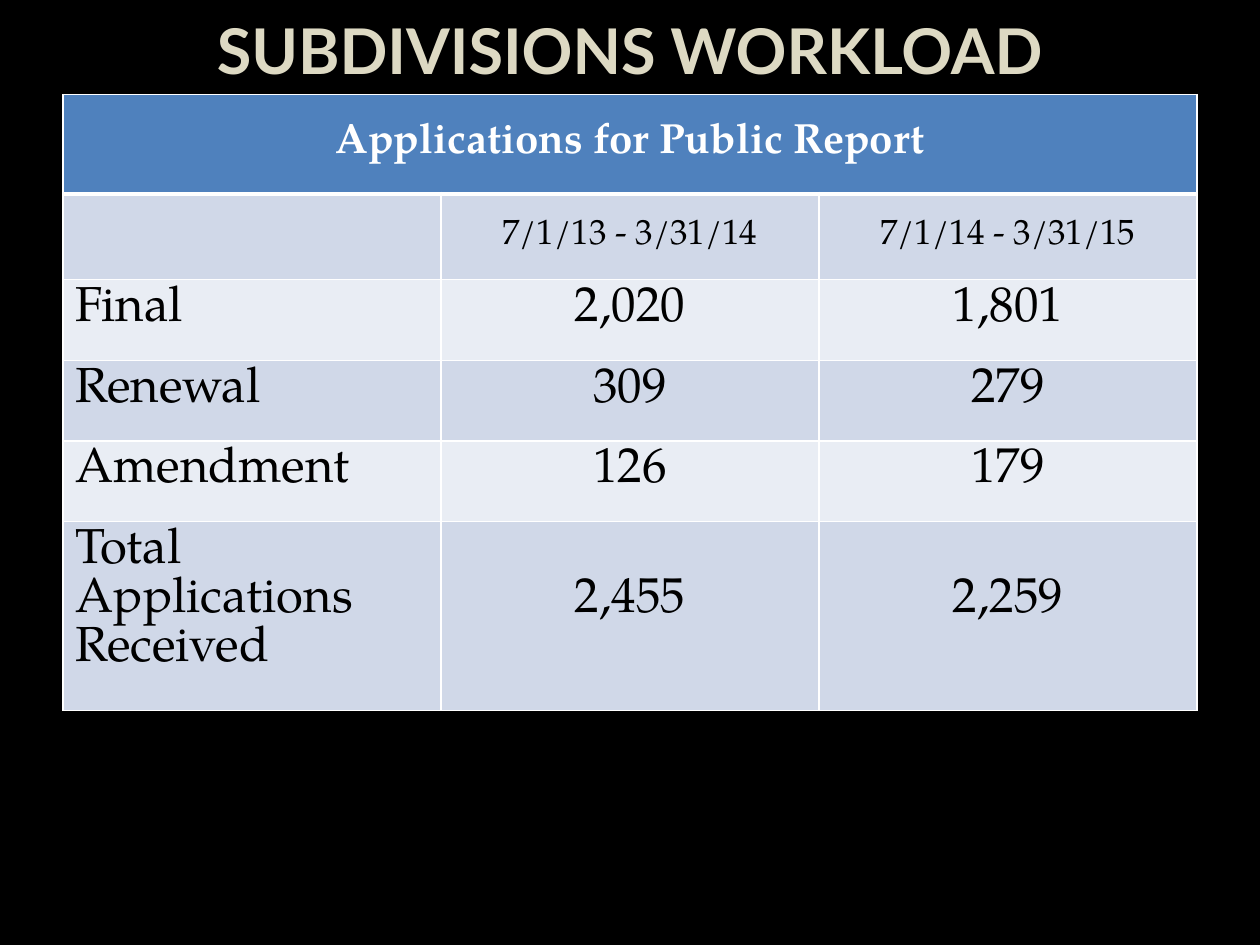
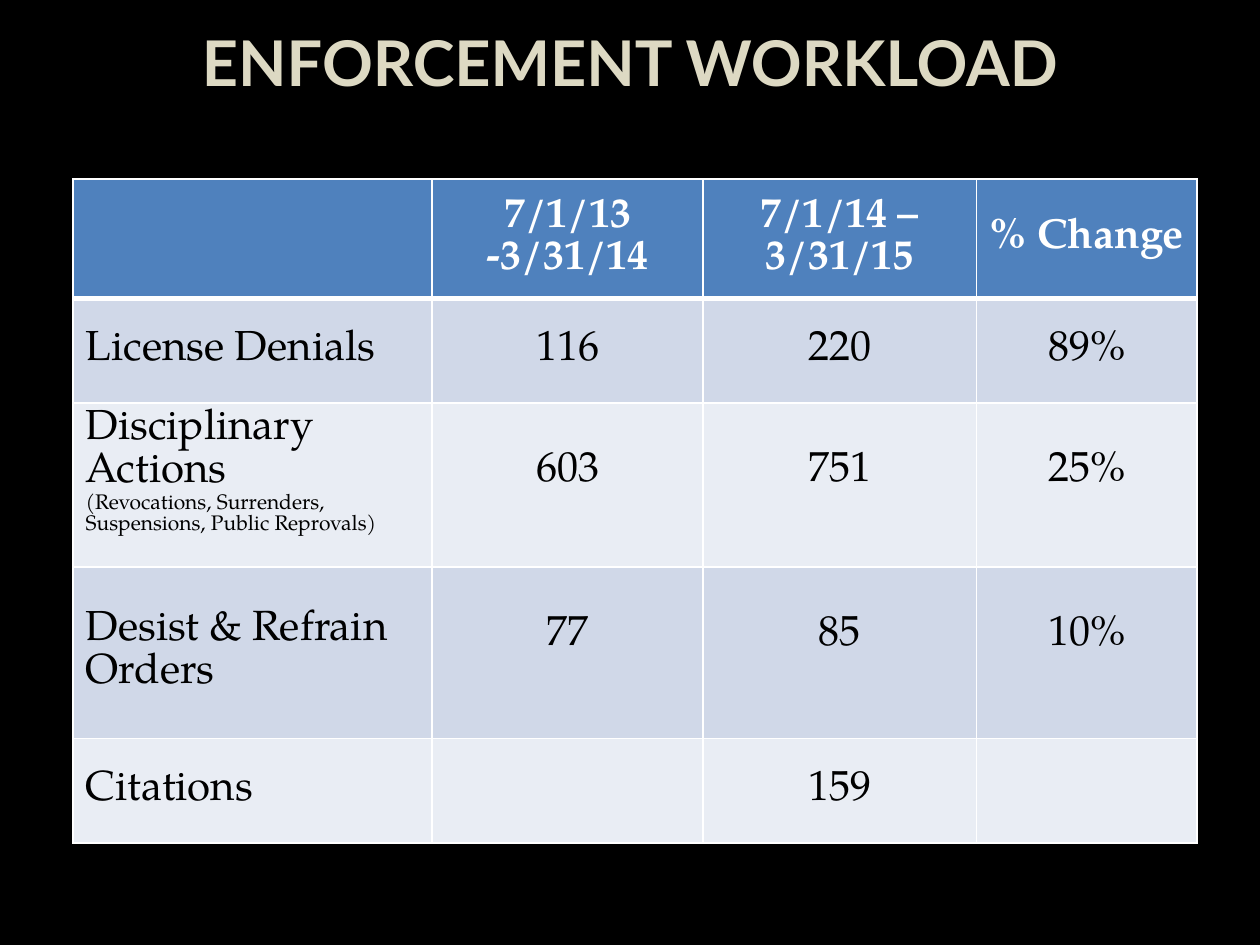
"""Build two workload slides, each with a title and a table."""
from lxml import etree
from pptx import Presentation
from pptx.dml.color import RGBColor
from pptx.enum.text import MSO_ANCHOR as ANCHOR, PP_ALIGN as ALIGN
from pptx.oxml.ns import qn
from pptx.util import Inches, Pt

BLACK, WHITE, SAND = "000000", "FFFFFF", "DDD9C3"
BLUE, BANDS = "4F81BD", ("E9EDF4", "D0D8E8")
TITLE_FONT, TABLE_FONT = "Lato", "TeX Gyre Pagella"
TOP, MIDDLE = ANCHOR.TOP, ANCHOR.MIDDLE


def put_text(tf, text, font=TABLE_FONT, size=24, color=BLACK, bold=False,
             align=ALIGN.CENTER, note_size=12):
    for i, line in enumerate(text.split("\n")):
        p = tf.add_paragraph() if i else tf.paragraphs[0]
        p.alignment = align
        r = p.add_run()
        r.text = line
        r.font.name, r.font.bold = font, bold
        r.font.size = Pt(note_size if i else size)
        r.font.color.rgb = RGBColor.from_string(color)


def add_border(cell, side, points):
    tc_pr = cell._tc.get_or_add_tcPr()
    ln = etree.SubElement(tc_pr, qn("a:ln" + side), w=str(Pt(points)))
    fill = etree.SubElement(ln, qn("a:solidFill"))
    etree.SubElement(fill, qn("a:srgbClr"), val=WHITE)


# Each row: height, text size, anchor, lines skipped above figures, texts.
SLIDES = [
    dict(title="SUBDIVISIONS WORKLOAD", title_top=0.04,
         left=0.5, top=0.75, cols=[3] * 3, rows=[
             (0.79, 24, MIDDLE, 0, ["Applications for Public Report", "", ""]),
             (0.68, 20, MIDDLE, 0, ["", "7/1/13 - 3/31/14", "7/1/14 - 3/31/15"]),
             (0.64, 28, TOP, 0, ["Final", "2,020", "1,801"]),
             (0.64, 28, TOP, 0, ["Renewal", "309", "279"]),
             (0.64, 28, TOP, 0, ["Amendment", "126", "179"]),
             (1.45, 28, TOP, 1, ["Total Applications Received", "2,455", "2,259"])]),
    dict(title="ENFORCEMENT WORKLOAD", title_top=0.14,
         left=0.58, top=1.42, cols=[2.85, 2.15, 2.17, 1.75], rows=[
             (0.95, 24, MIDDLE, 0, ["", "7/1/13 -3/31/14", "7/1/14 – 3/31/15", "% Change"]),
             (0.83, 24, MIDDLE, 0, ["License Denials", "116", "220", "89%"]),
             (1.1, 24, TOP, 1, ["Disciplinary Actions\n(Revocations, Surrenders, "
                                "Suspensions, Public Reprovals)", "603", "751", "25%"]),
             (1.36, 24, MIDDLE, 1, ["Desist & Refrain Orders", "77", "85", "10%"]),
             (0.83, 24, MIDDLE, 0, ["Citations", "", "159", ""])]),
]

prs = Presentation()
prs.slide_width, prs.slide_height = Inches(10), Inches(7.5)

for page in SLIDES:
    s = prs.slides.add_slide(prs.slide_layouts[6])
    s.background.fill.solid()
    s.background.fill.fore_color.rgb = RGBColor.from_string(BLACK)

    title = s.shapes.add_textbox(Inches(0.5), Inches(page["title_top"]), Inches(9), Inches(0.7))
    tf = title.text_frame
    tf.word_wrap, tf.vertical_anchor = True, MIDDLE
    put_text(tf, page["title"], font=TITLE_FONT, size=36, color=SAND, bold=True)

    cols, rows = page["cols"], page["rows"]
    table = s.shapes.add_table(len(rows), len(cols), Inches(page["left"]), Inches(page["top"]),
                               Inches(sum(cols)), Inches(sum(row[0] for row in rows))).table
    table.first_row = table.horz_banding = False
    for col, width in zip(table.columns, cols):
        col.width = Inches(width)

    for i, (height, size, anchor, skipped, texts) in enumerate(rows):
        table.rows[i].height = Inches(height)
        header = i == 0
        for j, text in enumerate(texts):
            cell = table.cell(i, j)
            for side in "LRTB":
                thick = (side, i) in (("B", 0), ("T", 1))
                add_border(cell, side, 3 if thick else 1)
            cell.fill.solid()
            cell.fill.fore_color.rgb = RGBColor.from_string(BLUE if header else BANDS[i % 2])
            cell.vertical_anchor = anchor
            if j and skipped:
                cell.vertical_anchor = TOP
                cell.margin_top = Inches(0.05) + Pt(size * skipped)
            if text:
                put_text(cell.text_frame, text, size=size, bold=header,
                         color=WHITE if header else BLACK,
                         align=ALIGN.CENTER if j or header else ALIGN.LEFT)
            else:
                cell.text_frame.paragraphs[0].font.size = Pt(size)
    if not any(rows[0][4][1:]):
        table.cell(0, 0).merge(table.cell(0, len(cols) - 1))

prs.save("out.pptx")
